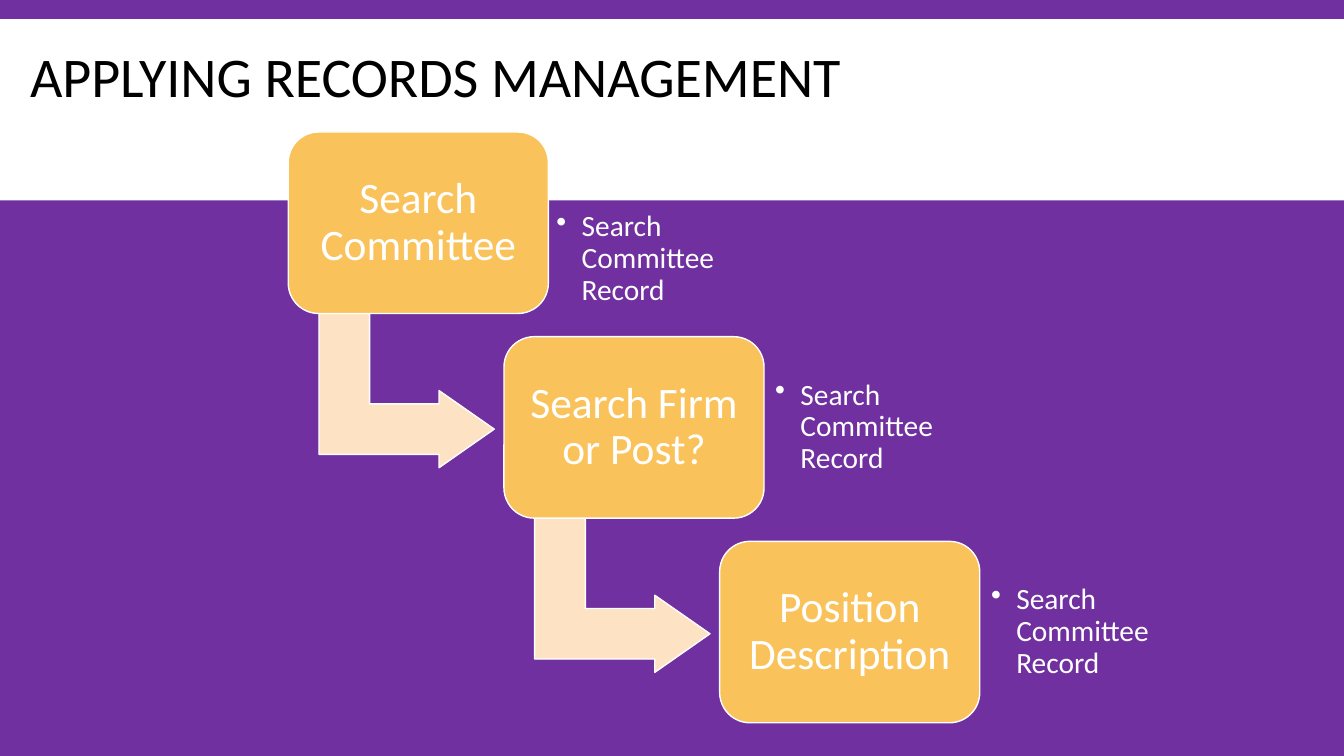
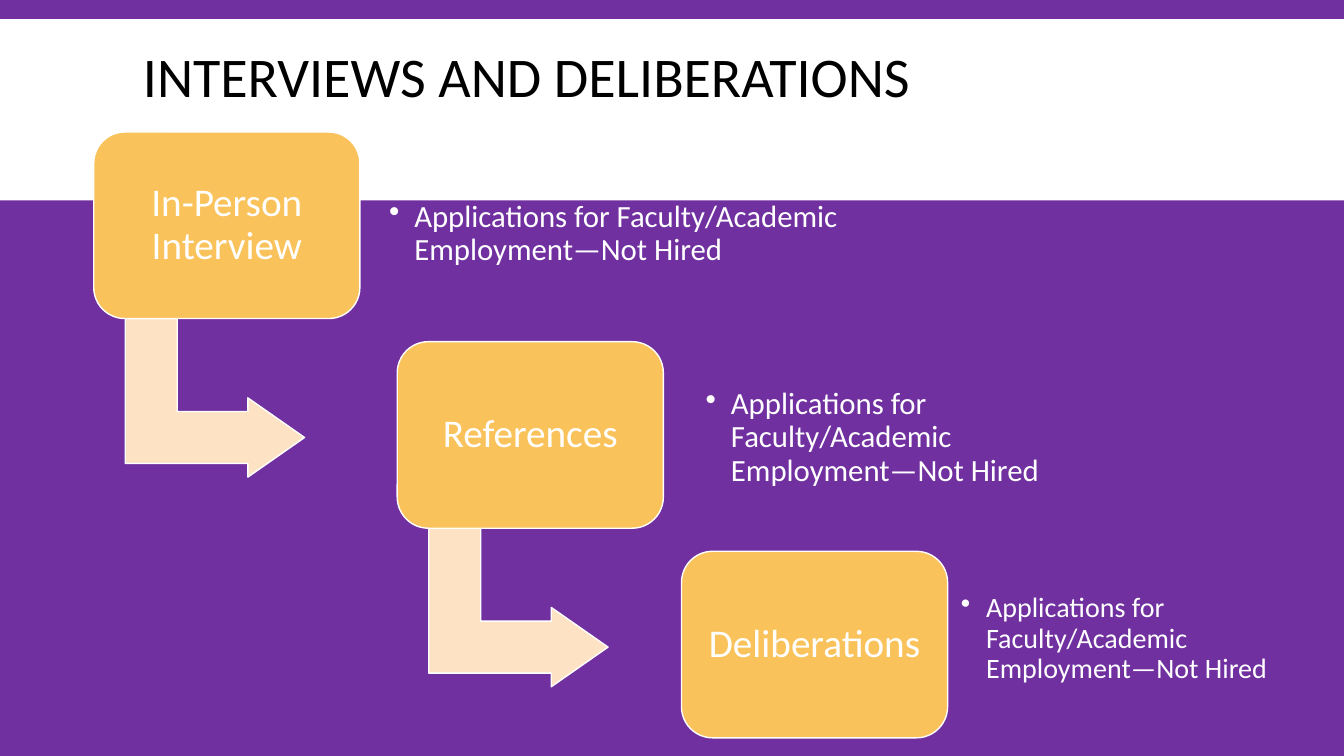
import dataclasses

import lxml.etree
import pptx
import pptx.dml.color
import pptx.enum.shapes
import pptx.enum.text
import pptx.oxml.ns
import pptx.util

RGB = pptx.dml.color.RGBColor
SHAPE = pptx.enum.shapes.MSO_SHAPE
ALIGN = pptx.enum.text.PP_ALIGN
ANCHOR = pptx.enum.text.MSO_ANCHOR

PURPLE = RGB(0x70, 0x30, 0xA0)
WHITE = RGB(0xFF, 0xFF, 0xFF)
BLACK = RGB(0x00, 0x00, 0x00)
AMBER = RGB(0xFA, 0xC2, 0x5A)
CREAM = RGB(0xFD, 0xE3, 0xC4)

FONT = "Calibri"
WIDTH = pptx.util.Inches(13.33)
HEIGHT = pptx.util.Inches(7.5)
BAND = (0, 2.53, 100, 24)
TITLE_TOP, TITLE_HEIGHT = 4.13, 12.93
FIRST_STEP_TOP = 17.47


@dataclasses.dataclass
class Step:
    label: str
    left: float
    note: str
    note_box: tuple
    note_size: int


@dataclasses.dataclass
class Staircase:
    title: str
    title_left: float
    title_width: float
    box_width: float
    box_height: float
    rise: float
    label_size: int
    steps: list


COMMITTEE = "Search Committee Record"
APPLICATIONS = "Applications for Faculty/Academic Employment—Not Hired"

STAIRCASES = [
    Staircase("APPLYING RECORDS MANAGEMENT", 1.5, 98.5, 19.35, 24, 27.07, 31, [
        Step("Search Committee", 21.45, COMMITTEE, (40.58, 24.53, 14.03, 19.47), 21),
        Step("Search Firm or Post?", 37.5, COMMITTEE, (56.86, 46.8, 14.03, 19.47), 21),
        Step("Position Description", 53.55, COMMITTEE, (72.92, 73.87, 14.03, 19.47), 21),
    ]),
    Staircase("INTERVIEWS AND DELIBERATIONS", 9.9, 80.27, 19.8, 24.67, 27.73, 28, [
        Step("In-Person Interview", 6.98, APPLICATIONS, (28.13, 22.13, 40.06, 17.6), 22),
        Step("References", 29.56, APPLICATIONS, (51.69, 48, 30.68, 19.87), 22),
        Step("Deliberations", 50.71, APPLICATIONS, (70.67, 75.47, 25.51, 18.13), 20),
    ]),
]


def share(left, top, width, height):
    return (int(WIDTH * left / 100), int(HEIGHT * top / 100),
            int(WIDTH * width / 100), int(HEIGHT * height / 100))


def add_block(slide, kind, place, fill, outlined=True):
    sp = slide.shapes.add_shape(kind, *place)
    sp.shadow.inherit = False
    sp.fill.solid()
    sp.fill.fore_color.rgb = fill
    if outlined:
        sp.line.color.rgb = WHITE
        sp.line.width = pptx.util.Pt(1)
    else:
        sp.line.fill.background()
    return sp


def write(sp, text, size, color, align=ALIGN.LEFT, spacing=0.9, inset=None):
    tf = sp.text_frame
    tf.word_wrap = True
    tf.vertical_anchor = ANCHOR.MIDDLE
    if inset is not None:
        tf.margin_left = tf.margin_right = pptx.util.Inches(inset)
        tf.margin_top = tf.margin_bottom = pptx.util.Inches(inset)
    p = tf.paragraphs[0]
    p.alignment = align
    p.line_spacing = spacing
    r = p.add_run()
    r.text = text
    r.font.name = FONT
    r.font.size = pptx.util.Pt(size)
    r.font.color.rgb = color
    return p


def add_title(slide, stairs):
    place = share(stairs.title_left, TITLE_TOP, stairs.title_width, TITLE_HEIGHT)
    write(slide.shapes.add_textbox(*place), stairs.title, 40, BLACK, spacing=0.85)


def add_note(slide, step):
    sp = slide.shapes.add_textbox(*share(*step.note_box))
    p = write(sp, step.note, step.note_size, WHITE, inset=0.11)
    pPr = p._p.get_or_add_pPr()
    indent = pptx.util.Inches(0.25)
    pPr.set("marL", str(indent))
    pPr.set("indent", str(-indent))
    bullet = lxml.etree.SubElement(pPr, pptx.oxml.ns.qn("a:buChar"))
    bullet.set("char", "•")


def add_step_box(slide, step, place, size):
    sp = add_block(slide, SHAPE.ROUNDED_RECTANGLE, place, AMBER)
    sp.adjustments[0] = 0.167
    write(sp, step.label, size, WHITE, ALIGN.CENTER, inset=0.13)


def add_turn_arrow(slide, box):
    left, top, width, height = box
    across, down = int(width * 0.674), int(height * 0.85)
    center_x = left + int(width * 0.118) + across // 2
    center_y = top + height + down // 2
    place = (center_x - down // 2, center_y - across // 2, down, across)
    sp = add_block(slide, SHAPE.BENT_UP_ARROW, place, CREAM)
    sp.rotation = 90
    for i, value in enumerate((0.328, 0.25, 0.358)):
        sp.adjustments[i] = value


def add_staircase(prs, stairs):
    slide = prs.slides.add_slide(prs.slide_layouts[6])
    add_block(slide, SHAPE.RECTANGLE, share(*BAND), WHITE, outlined=False)
    add_title(slide, stairs)
    for i, step in enumerate(stairs.steps):
        box = share(step.left, FIRST_STEP_TOP + i * stairs.rise,
                    stairs.box_width, stairs.box_height)
        if step is not stairs.steps[-1]:
            add_turn_arrow(slide, box)
        add_step_box(slide, step, box, stairs.label_size)
        add_note(slide, step)


def main():
    prs = pptx.Presentation()
    prs.slide_width, prs.slide_height = WIDTH, HEIGHT
    background = prs.slide_master.background.fill
    background.solid()
    background.fore_color.rgb = PURPLE
    for stairs in STAIRCASES:
        add_staircase(prs, stairs)
    prs.save("out.pptx")


if __name__ == "__main__":
    main()
